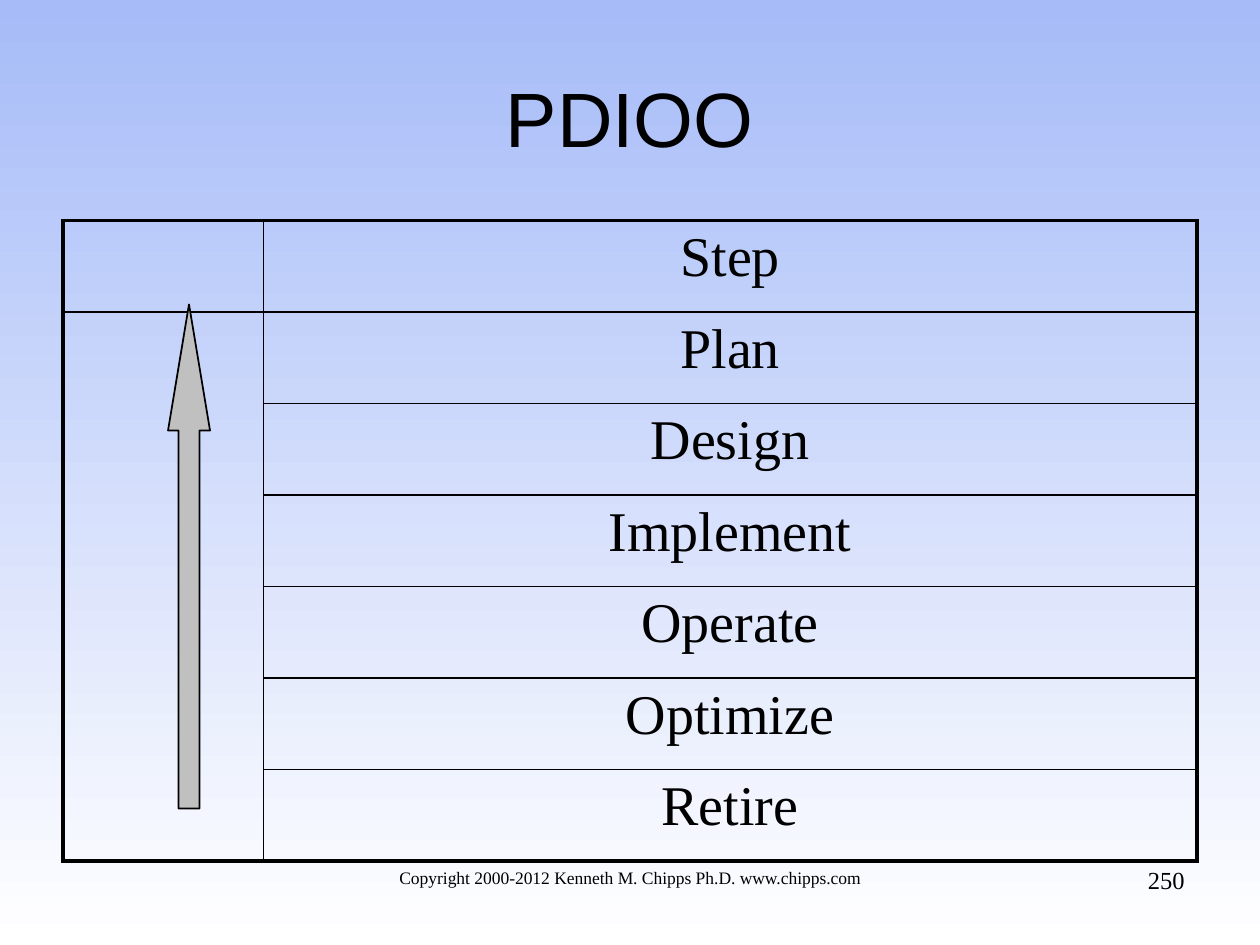
from lxml import etree
from pptx import Presentation
from pptx import util as u
from pptx.dml.color import RGBColor
from pptx.enum import shapes, text
from pptx.oxml.ns import qn

Pt = u.Pt
BLACK = "000000"
SERIF = "Times New Roman"
STEPS = ["Step", "Plan", "Design", "Implement", "Operate", "Optimize", "Retire"]
THIN, THICK = 1, 2.25


def color(code):
    return RGBColor.from_string(code)


def style(par, size, font, align):
    par.alignment = align
    for run in par.runs:
        run.font.size = Pt(size)
        run.font.name = font
        run.font.color.rgb = color(BLACK)


def label(slide, box, words, size, font, align, anchor=text.MSO_ANCHOR.TOP):
    frame = slide.shapes.add_textbox(*map(Pt, box)).text_frame
    frame.word_wrap = True
    frame.vertical_anchor = anchor
    frame.text = words
    style(frame.paragraphs[0], size, font, align)


def backdrop(slide):
    fill = slide.background.fill
    fill.gradient()
    fill.gradient_angle = 270
    for stop, place, code in zip(fill.gradient_stops, (0, 1), ("A6BBF8", "FFFFFF")):
        stop.position = place
        stop.color.rgb = color(code)


def border(cell, sides):
    """Draw cell edges; sides maps L, R, T, B (in that order) to widths."""
    props = cell._tc.get_or_add_tcPr()
    for spot, (side, width) in enumerate(sides.items()):
        line = etree.Element(qn("a:ln" + side), w=str(Pt(width)))
        fill = etree.SubElement(line, qn("a:solidFill"))
        etree.SubElement(fill, qn("a:srgbClr"), val=BLACK)
        props.insert(spot, line)


def grid(slide, box):
    left, top, width, height = box
    count = len(STEPS)
    table = slide.shapes.add_table(count, 2, *map(Pt, box)).table
    table.first_row = table.horz_banding = False
    first = 114.5
    table.columns[0].width = Pt(first)
    table.columns[1].width = Pt(width - first)
    last = count - 1
    for row, step in enumerate(STEPS):
        table.rows[row].height = Pt(height / count)
        for col in range(2):
            cell = table.cell(row, col)
            cell.fill.background()
            sides = {
                "L": THIN if col else THICK,
                "R": THICK if col else THIN,
                "T": THIN if row else THICK,
                "B": THICK if row == last or (row and not col) else THIN,
            }
            border(cell, sides)
        cell.margin_left = cell.margin_right = Pt(7.9)
        cell.margin_top = cell.margin_bottom = Pt(3.6)
        cell.text = step
        par = cell.text_frame.paragraphs[0]
        par.space_before = Pt(6.4)
        style(par, 32, SERIF, text.PP_ALIGN.CENTER)
    # One tall cell beside the steps
    table.cell(1, 0).merge(table.cell(last, 0))


def arrow(slide, box):
    shape = slide.shapes.add_shape(shapes.MSO_SHAPE.UP_ARROW, *map(Pt, box))
    shape.adjustments[0] = 0.5
    shape.adjustments[1] = 3
    shape.shadow.inherit = False
    shape.fill.solid()
    shape.fill.fore_color.rgb = color("C0C0C0")
    shape.line.color.rgb = color(BLACK)
    shape.line.width = Pt(1)


def main():
    deck = Presentation()
    deck.slide_width, deck.slide_height = Pt(720), Pt(540)
    slide = deck.slides.add_slide(deck.slide_layouts[6])
    backdrop(slide)

    # Title
    label(slide, (36, 21.6, 648, 90), "PDIOO", 44, "Arial",
          text.PP_ALIGN.CENTER, text.MSO_ANCHOR.MIDDLE)

    # Steps and the arrow beside them
    grid(slide, (36, 126, 648, 366))

    # Footer
    label(slide, (216, 492, 288, 37.5),
          "Copyright 2000-2012 Kenneth M. Chipps Ph.D. www.chipps.com",
          10, SERIF, text.PP_ALIGN.CENTER)
    label(slide, (516, 490.5, 168, 37.5), "250", 14, SERIF, text.PP_ALIGN.RIGHT)

    arrow(slide, (96, 174, 24, 288))
    deck.save("out.pptx")


if __name__ == "__main__":
    main()
